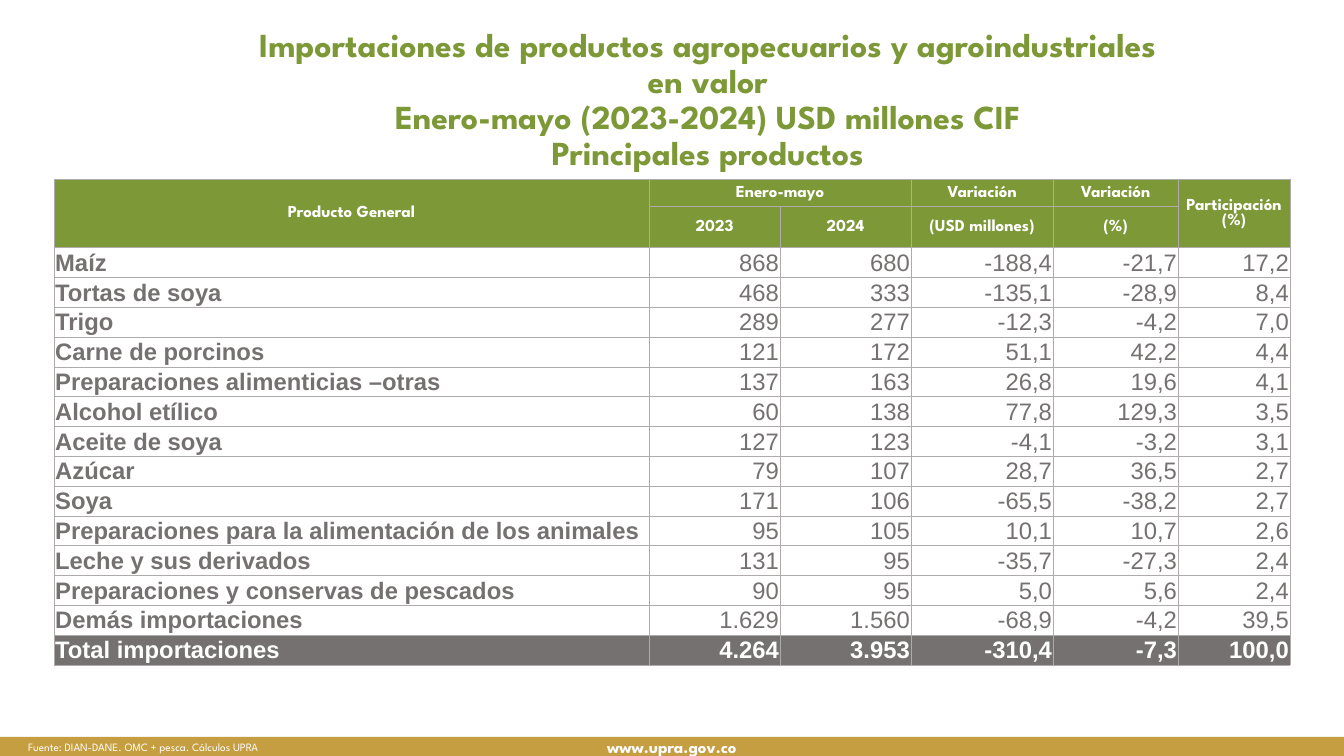
from lxml import etree
from pptx import Presentation
from pptx import util as u
from pptx.dml.color import RGBColor
from pptx.enum import shapes, text
from pptx.oxml.ns import qn

Cm, Pt = u.Cm, u.Pt
ALIGN, ANCHOR = text.PP_ALIGN, text.MSO_ANCHOR
HEX = {"green": "7D9837", "gold": "C59E41", "white": "FFFFFF",
       "ink": "757171", "gray": "767171", "rule": "AFABAB"}
HEAD = "League Spartan"


def style(frame, size, face, color, bold, align):
    for para in frame.paragraphs:
        para.alignment = align
        for run in para.runs:
            font = run.font
            font.size, font.name, font.bold = Pt(size), face, bold
            font.color.rgb = RGBColor.from_string(HEX[color])


def border(cell):
    """Draw a thin rule on all four sides; call before filling the cell."""
    props = cell._tc.get_or_add_tcPr()
    for side in ("lnL", "lnR", "lnT", "lnB"):
        line = etree.SubElement(props, qn("a:" + side), w=str(Pt(0.25)))
        fill = etree.SubElement(line, qn("a:solidFill"))
        etree.SubElement(fill, qn("a:srgbClr"), val=HEX["rule"])


deck = Presentation()
deck.slide_width, deck.slide_height = Cm(33.87), Cm(19.05)
slide = deck.slides.add_slide(deck.slide_layouts[5])

# Title
title = slide.shapes.title
title.left, title.top = Cm(6.2), Cm(0.58)
title.width, title.height = Cm(23.27), Cm(2.72)
frame = title.text_frame
frame.text = ("Importaciones de productos agropecuarios y agroindustriales en valor\v"
              "Enero-mayo (2023-2024) USD millones CIF\vPrincipales productos")
frame.word_wrap = True
frame.auto_size = text.MSO_AUTO_SIZE.NONE
frame.vertical_anchor = ANCHOR.TOP
frame.paragraphs[0].line_spacing = 0.9
style(frame, 24, HEAD, "green", True, ALIGN.CENTER)

# Footer
bar = slide.shapes.add_shape(shapes.MSO_SHAPE.RECTANGLE, 0, Cm(18.57),
                             deck.slide_width, Cm(0.48))
bar.shadow.inherit = False
bar.fill.solid()
bar.fill.fore_color.rgb = RGBColor.from_string(HEX["gold"])
bar.line.fill.background()
frame = bar.text_frame
frame.text = "www.upra.gov.co"
frame.margin_top = frame.margin_bottom = 0
frame.vertical_anchor = ANCHOR.MIDDLE
style(frame, 12, HEAD, "white", True, ALIGN.CENTER)

note = slide.shapes.add_textbox(Cm(0.46), Cm(18.52), Cm(32.79), Cm(0.6))
note.text_frame.text = "Fuente: DIAN-DANE. OMC + pesca. Cálculos UPRA"
note.text_frame.word_wrap = True
style(note.text_frame, 8, HEAD, "white", False, ALIGN.JUSTIFY)

# Table
rows = [
    ("Producto General", "Enero-mayo", "", "Variación", "Variación", "Participación (%)"),
    ("", "2023", "2024", "(USD millones)", "(%)", ""),
    ("Maíz", "868", "680", "-188,4", "-21,7", "17,2"),
    ("Tortas de soya", "468", "333", "-135,1", "-28,9", "8,4"),
    ("Trigo", "289", "277", "-12,3", "-4,2", "7,0"),
    ("Carne de porcinos", "121", "172", "51,1", "42,2", "4,4"),
    ("Preparaciones alimenticias –otras", "137", "163", "26,8", "19,6", "4,1"),
    ("Alcohol etílico", "60", "138", "77,8", "129,3", "3,5"),
    ("Aceite de soya", "127", "123", "-4,1", "-3,2", "3,1"),
    ("Azúcar", "79", "107", "28,7", "36,5", "2,7"),
    ("Soya", "171", "106", "-65,5", "-38,2", "2,7"),
    ("Preparaciones para la alimentación de los animales",
     "95", "105", "10,1", "10,7", "2,6"),
    ("Leche y sus derivados", "131", "95", "-35,7", "-27,3", "2,4"),
    ("Preparaciones y conservas de pescados", "90", "95", "5,0", "5,6", "2,4"),
    ("Demás importaciones", "1.629", "1.560", "-68,9", "-4,2", "39,5"),
    ("Total importaciones", "4.264", "3.953", "-310,4", "-7,3", "100,0"),
]
widths = [15, 3.3, 3.3, 3.58, 3.15, 2.82]
heights = [0.68, 1.03] + [0.747] * (len(rows) - 2)
holder = slide.shapes.add_table(len(rows), len(widths), Cm(1.36), Cm(4.51),
                                Cm(sum(widths)), Cm(sum(heights)))
table = holder.table
table.first_row = table.horz_banding = False
for col, width in zip(table.columns, widths):
    col.width = Cm(width)
for row, height in zip(table.rows, heights):
    row.height = Cm(height)

last = len(rows) - 1
for r, row in enumerate(rows):
    for c, label in enumerate(row):
        cell = table.cell(r, c)
        cell.margin_left = cell.margin_right = cell.margin_top = Cm(0.03)
        cell.margin_bottom = 0
        cell.vertical_anchor = ANCHOR.MIDDLE
        border(cell)
        if 2 <= r < last:
            cell.fill.background()
        else:
            cell.fill.solid()
            shade = "green" if r < 2 else "gray"
            cell.fill.fore_color.rgb = RGBColor.from_string(HEX[shade])
        cell.text_frame.text = label
        if r < 2:
            style(cell.text_frame, 12, HEAD, "white", True, ALIGN.CENTER)
        else:
            style(cell.text_frame, 17, "Arial", "white" if r == last else "ink",
                  c == 0 or r == last, ALIGN.RIGHT if c else ALIGN.LEFT)

for first, end in (((0, 0), (1, 0)), ((0, 1), (0, 2)), ((0, 5), (1, 5))):
    table.cell(*first).merge(table.cell(*end))

deck.save("out.pptx")
